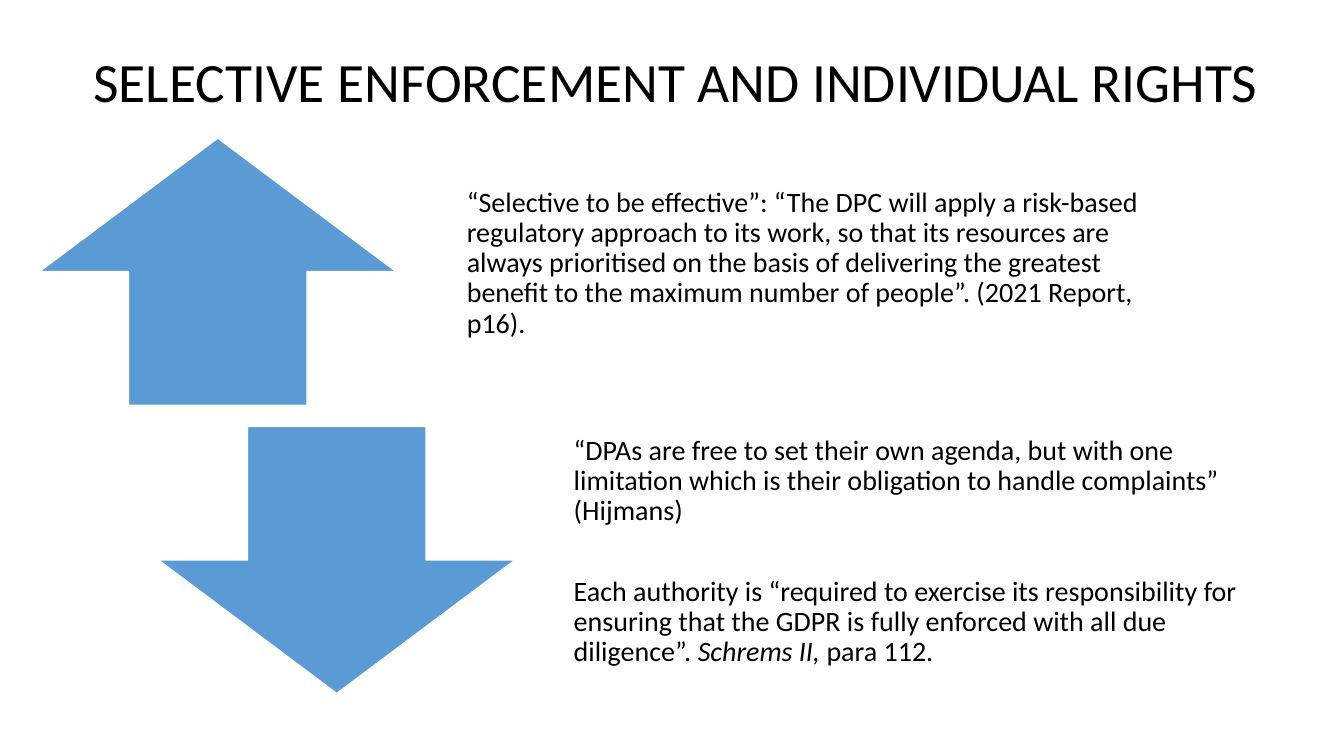
"""Build the slide on selective enforcement and individual rights."""
from pptx import Presentation
from pptx.dml.color import RGBColor
from pptx.enum import shapes, text
from pptx.util import Inches, Pt

TITLE = "SELECTIVE ENFORCEMENT AND INDIVIDUAL RIGHTS "
ARROW_SIZE = (3.54, 2.65)
QUOTE_SIZE = (7.09, 2.65)
PARAGRAPH_GAP = 36

SIDES = [
    {
        "arrow": shapes.MSO_SHAPE.UP_ARROW,
        "arrow_left": 0.39,
        "quote_left": 4.47,
        "top": 1.37,
        "quotes": [
            [("“Selective to be effective”: “The DPC will apply a risk-based "
              "regulatory approach to its work, so that its resources are always "
              "prioritised on the basis of delivering the greatest benefit to the "
              "maximum number of people”. (2021 Report, p16).", False)],
        ],
    },
    {
        "arrow": shapes.MSO_SHAPE.DOWN_ARROW,
        "arrow_left": 1.57,
        "quote_left": 5.53,
        "top": 4.23,
        "quotes": [
            [("“DPAs are free to set their own agenda, but with one limitation "
              "which is their obligation to handle complaints” (Hijmans)", False)],
            [("Each authority is “required to exercise its responsibility for "
              "ensuring that the GDPR is fully enforced with all due "
              "diligence”. ", False),
             ("Schrems II, ", True),
             ("para 112.", False)],
        ],
    },
]


def color(value):
    return RGBColor.from_string(value)


def style(para, size):
    para.line_spacing = 0.9
    para.font.name = "Calibri"
    para.font.size = Pt(size)
    para.font.color.rgb = color("000000")


def add_title(page):
    title = page.shapes.title
    title.left, title.top = Inches(0.39), Inches(0.4)
    title.width, title.height = Inches(12.75), Inches(0.88)
    frame = title.text_frame
    frame.text = TITLE
    frame.auto_size = text.MSO_AUTO_SIZE.NONE
    frame.vertical_anchor = text.MSO_ANCHOR.MIDDLE
    para = frame.paragraphs[0]
    para.alignment = text.PP_ALIGN.CENTER
    style(para, 39.6)


def add_arrow(page, side):
    place = (side["arrow_left"], side["top"], *ARROW_SIZE)
    arrow = page.shapes.add_shape(side["arrow"], *map(Inches, place))
    arrow.shadow.inherit = False
    arrow.fill.solid()
    arrow.fill.fore_color.rgb = color("5B9BD5")
    arrow.line.color.rgb = color("FFFFFF")
    arrow.line.width = Pt(1)


def add_quotes(page, side):
    place = (side["quote_left"], side["top"], *QUOTE_SIZE)
    frame = page.shapes.add_textbox(*map(Inches, place)).text_frame
    frame.word_wrap = True
    frame.vertical_anchor = text.MSO_ANCHOR.MIDDLE
    frame.margin_left = frame.margin_right = frame.margin_bottom = Inches(0.16)
    frame.margin_top = 0
    for index, quote in enumerate(side["quotes"]):
        para = frame.add_paragraph() if index else frame.paragraphs[0]
        style(para, 20)
        if index:
            para.space_before = Pt(PARAGRAPH_GAP)
        for words, italic in quote:
            span = para.add_run()
            span.text = words
            if italic:
                span.font.italic = True


def main():
    deck = Presentation()
    deck.slide_width, deck.slide_height = Inches(13.33), Inches(7.5)
    page = deck.slides.add_slide(deck.slide_layouts.get_by_name("Title Only"))
    add_title(page)
    for side in SIDES:
        add_arrow(page, side)
        add_quotes(page, side)
    deck.save("out.pptx")


if __name__ == "__main__":
    main()
